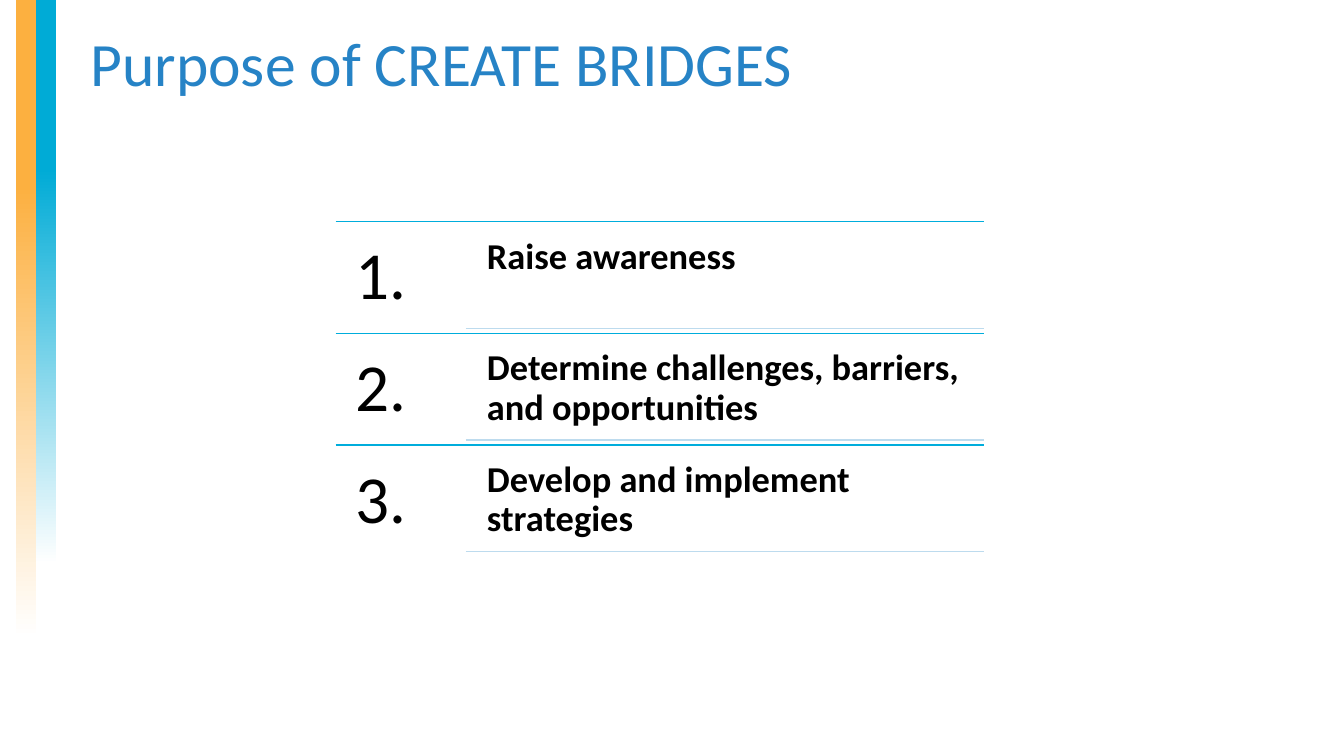
from lxml.etree import SubElement
from pptx import Presentation
from pptx.dml.color import RGBColor
from pptx.enum.shapes import MSO_CONNECTOR, MSO_SHAPE
from pptx.enum.text import MSO_ANCHOR
from pptx.oxml.ns import qn
from pptx.util import Inches, Pt

COLORS = {
    "orange": "FCB040",
    "cyan": "00ABD6",
    "white": "FFFFFF",
    "title": "2683C6",
    "rule": "00ADDC",
    "pale_rule": "BDDBEE",
    "text": "000000",
}
TITLE_FORMAT = {"size": Pt(44), "name": "Calibri"}
NUMBER_FORMAT = {"size": Pt(48), "name": "Calibri"}
PURPOSE_FORMAT = {"size": Pt(26), "name": "Calibri", "bold": True}
PURPOSES = [
    "Raise awareness",
    "Determine challenges, barriers, and opportunities",
    "Develop and implement strategies",
]
LIST_LEFT, LIST_RIGHT, LIST_TOP = 3.33, 9.76, 2.2
LIST_HEIGHT = 3.32
NUMBER_WIDTH = 1.29
PURPOSE_OFFSET, PURPOSE_HEIGHT = 0.05, 1.01


def color(name):
    """Return the named colour."""
    return RGBColor.from_string(COLORS[name])


def add_fading_bar(slide, left, height, color_name, start):
    """Add a vertical bar that fades to white from the given stop."""
    bar = slide.shapes.add_shape(
        MSO_SHAPE.RECTANGLE, Inches(left), 0, Inches(0.2), Inches(height)
    )
    bar.shadow.inherit = False
    bar.line.fill.background()
    bar.fill.gradient()
    bar.fill.gradient_angle = 270
    stops = [(start, color_name), (1, "white")]
    for stop, (position, name) in zip(bar.fill.gradient_stops, stops):
        stop.position = position
        stop.color.rgb = color(name)


def add_text(slide, text, box, font_format, color_name="text", inset=0.1):
    """Add a wrapped, top-aligned text box."""
    shape = slide.shapes.add_textbox(*map(Inches, box))
    frame = shape.text_frame
    frame.word_wrap = True
    frame.vertical_anchor = MSO_ANCHOR.TOP
    for side in ("left", "top", "right", "bottom"):
        setattr(frame, f"margin_{side}", Inches(inset))
    paragraph = frame.paragraphs[0]
    paragraph.line_spacing = 0.9
    run = paragraph.add_run()
    run.text = text
    for name, value in font_format.items():
        setattr(run.font, name, value)
    run.font.color.rgb = color(color_name)


def add_rule(slide, left, top, color_name):
    """Add a horizontal rule that ends at the right edge of the list."""
    rule = slide.shapes.add_connector(
        MSO_CONNECTOR.STRAIGHT,
        Inches(left), Inches(top), Inches(LIST_RIGHT), Inches(top),
    )
    rule.line.color.rgb = color(color_name)
    rule.line.width = Pt(1)
    SubElement(rule._element.spPr, qn("a:effectLst"))


def add_purpose(slide, number, text, top, row_height):
    """Add one numbered row with its rules."""
    purpose_left = LIST_LEFT + NUMBER_WIDTH
    purpose_top = top + PURPOSE_OFFSET
    add_rule(slide, LIST_LEFT, top, "rule")
    add_text(slide, f"{number}.", (LIST_LEFT, top, NUMBER_WIDTH, row_height),
             NUMBER_FORMAT, inset=0.2)
    add_text(slide, text, (purpose_left + 0.1, purpose_top, 5.05, PURPOSE_HEIGHT),
             PURPOSE_FORMAT, inset=0.11)
    add_rule(slide, purpose_left, purpose_top + PURPOSE_HEIGHT, "pale_rule")


def main():
    """Build and save the slide."""
    presentation = Presentation()
    presentation.slide_width = Inches(13.33)
    presentation.slide_height = Inches(7.5)
    slide = presentation.slides.add_slide(presentation.slide_layouts[6])
    add_fading_bar(slide, 0.16, 6.33, "orange", 0.29)
    add_fading_bar(slide, 0.36, 5.6, "cyan", 0.3)
    add_text(slide, "Purpose of CREATE BRIDGES", (0.8, 0.23, 12.21, 1.45),
             TITLE_FORMAT, "title")
    row_height = LIST_HEIGHT / len(PURPOSES)
    for index, text in enumerate(PURPOSES):
        add_purpose(slide, index + 1, text, LIST_TOP + index * row_height, row_height)
    presentation.save("out.pptx")


if __name__ == "__main__":
    main()
